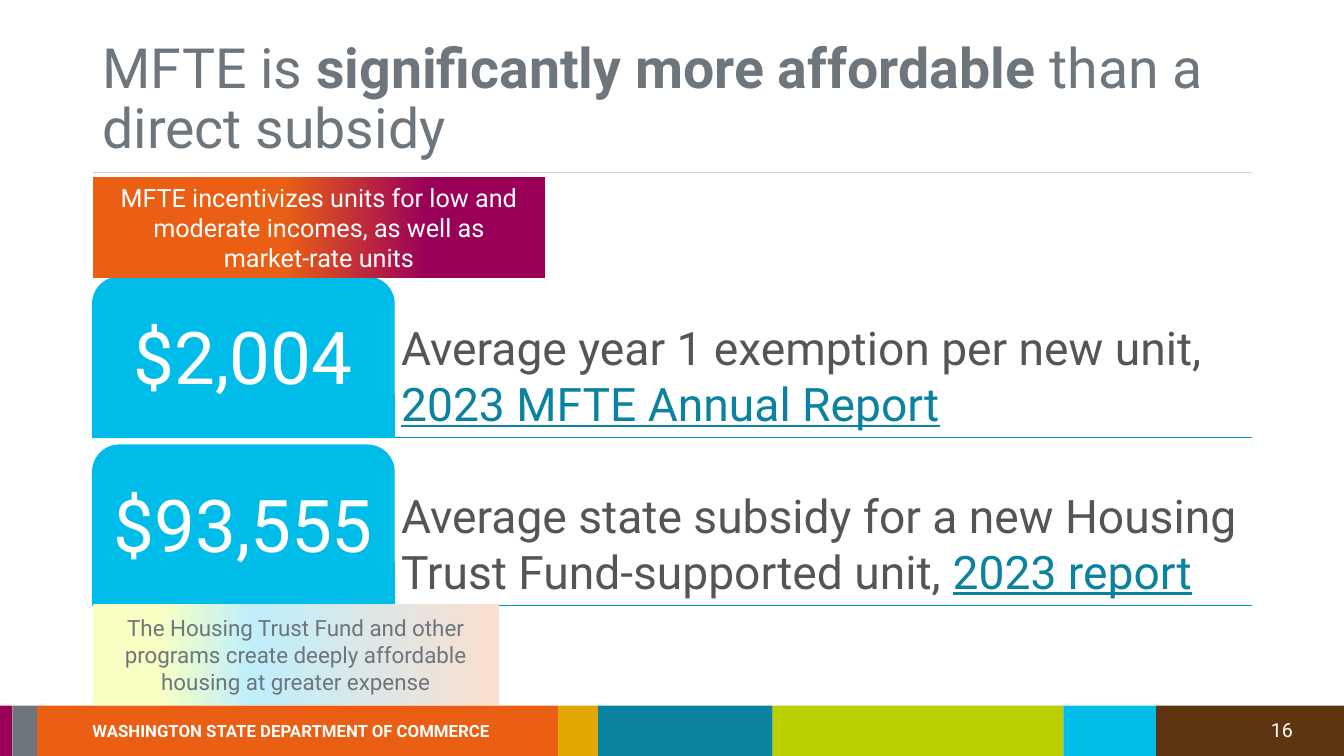
from lxml.etree import SubElement
from pptx import Presentation
from pptx.dml.color import RGBColor
from pptx.enum.shapes import MSO_CONNECTOR, MSO_SHAPE
from pptx.enum.text import MSO_ANCHOR, MSO_AUTO_SIZE, PP_ALIGN
from pptx.oxml.ns import qn
from pptx.util import Pt

WHITE = RGBColor(0xFF, 0xFF, 0xFF)
ORANGE = RGBColor(0xEA, 0x5F, 0x14)
GOLD = RGBColor(0xE2, 0xA7, 0x00)
TEAL = RGBColor(0x0A, 0x82, 0xA0)
PLUM = RGBColor(0x9B, 0x00, 0x59)
LIME = RGBColor(0xBB, 0xCE, 0x00)
BROWN = RGBColor(0x5E, 0x34, 0x11)
CYAN = RGBColor(0x00, 0xBC, 0xE8)
GRAY = RGBColor(0x6E, 0x76, 0x7D)
TEXT_GRAY = RGBColor(0x55, 0x55, 0x55)
RULE_GRAY = RGBColor(0xCF, 0xCF, 0xCF)
RULE_BLUE = RGBColor(0x00, 0x97, 0xBA)
PALE_YELLOW = RGBColor(0xF9, 0xFF, 0xC2)
PALE_BLUE = RGBColor(0xBF, 0xEF, 0xFB)
PALE_ORANGE = RGBColor(0xFB, 0xDF, 0xD0)

LEFT, WIDTH = 66.2, 828


class SlideBuilder:
    font = "Roboto"

    def __init__(self, slide):
        self.slide = slide

    def block(self, x, y, w, h, fill=None, kind=MSO_SHAPE.RECTANGLE, stops=()):
        """Add a filled shape; stops are (percent, colour) pairs."""
        shape = self.slide.shapes.add_shape(kind, Pt(x), Pt(y), Pt(w), Pt(h))
        shape.shadow.inherit = False
        shape.line.fill.background()
        if stops:
            shape.fill.gradient()
            shape.fill.gradient_angle = 0
            stop_list = next(shape.element.iter(qn("a:gsLst")))
            for old_stop in list(stop_list):
                stop_list.remove(old_stop)
            for percent, color in stops:
                stop = SubElement(stop_list, qn("a:gs"), pos=str(percent * 1000))
                SubElement(stop, qn("a:srgbClr"), val=str(color))
        else:
            shape.fill.solid()
            shape.fill.fore_color.rgb = fill
        return shape

    def rule(self, y, color):
        line = self.slide.shapes.add_connector(
            MSO_CONNECTOR.STRAIGHT, Pt(LEFT), Pt(y), Pt(LEFT + WIDTH), Pt(y))
        line.line.color.rgb = color
        line.line.width = Pt(1)
        SubElement(line.element.spPr, qn("a:effectLst"))

    def fill_text(self, shape, paragraphs, size, color, align=PP_ALIGN.CENTER,
                  anchor=MSO_ANCHOR.MIDDLE, spacing=None, inset=None, wrap=True):
        """Fill a shape; each run is (text, style), style a dict of overrides."""
        frame = shape.text_frame
        frame.word_wrap = wrap
        frame.auto_size = MSO_AUTO_SIZE.NONE if wrap else MSO_AUTO_SIZE.SHAPE_TO_FIT_TEXT
        frame.vertical_anchor = anchor
        if inset is not None:
            frame.margin_left = frame.margin_right = Pt(inset)
            frame.margin_top = frame.margin_bottom = Pt(inset)
        for index, runs in enumerate(paragraphs):
            paragraph = frame.add_paragraph() if index else frame.paragraphs[0]
            paragraph.alignment = align
            if spacing:
                paragraph.line_spacing = spacing
            for text, style in runs:
                run = paragraph.add_run()
                run.text = text
                run.font.name = self.font
                run.font.size = Pt(size)
                run.font.color.rgb = style.get("color", color)
                run.font.bold = style.get("bold", False)
                run.font.underline = style.get("underline", False)

    def text(self, x, y, w, h, paragraphs, size, color, **layout):
        box = self.slide.shapes.add_textbox(Pt(x), Pt(y), Pt(w), Pt(h))
        self.fill_text(box, paragraphs, size, color, **layout)


def main():
    deck = Presentation()
    deck.slide_width, deck.slide_height = Pt(960), Pt(540)
    page = SlideBuilder(deck.slides.add_slide(deck.slide_layouts[6]))

    # Footer band
    footer_edges = [0, 8.8, 26.5, 398.7, 427.3, 552, 759.6, 825.8, 960]
    footer_colors = [PLUM, GRAY, ORANGE, GOLD, TEAL, LIME, CYAN, BROWN]
    for start, end, color in zip(footer_edges, footer_edges[1:], footer_colors):
        page.block(start, 500.4, end - start, 39.6, color)
    page.block(0, 497.5, 960, 6.5, WHITE)
    page.text(59, 511.2, 304.6, 21.6,
              [[("WASHINGTON STATE DEPARTMENT OF COMMERCE", {"bold": True})]],
              12, WHITE, align=PP_ALIGN.LEFT, anchor=MSO_ANCHOR.TOP, wrap=False)
    page.text(900.7, 509, 31.7, 24.5, [[("16", {})]], 14, WHITE,
              align=PP_ALIGN.LEFT, anchor=MSO_ANCHOR.TOP, wrap=False)

    # Title
    page.rule(123.1, RULE_GRAY)
    page.text(LEFT, 22.3, WIDTH, 95.8,
              [[("MFTE is ", {}),
                ("significantly more affordable ", {"bold": True}),
                ("than a direct subsidy", {})]],
              39.6, GRAY, align=PP_ALIGN.LEFT, anchor=MSO_ANCHOR.BOTTOM, spacing=0.9)

    # Cost rows
    costs = [
        ("$2,004", "Average year 1 exemption per new unit, ", "2023 MFTE Annual Report"),
        ("$93,555", "Average state subsidy for a new Housing Trust Fund-supported unit, ",
         "2023 report"),
    ]
    row_top, row_pitch, row_height, amount_width = 198, 120, 114.4, 215.3
    for index, (amount, description, report) in enumerate(costs):
        top = row_top + index * row_pitch
        page.rule(top + row_height, RULE_BLUE)
        page.text(LEFT + amount_width, top, WIDTH - amount_width, row_height,
                  [[(description, {}), (report, {"color": TEAL, "underline": True})]],
                  33, TEXT_GRAY, align=PP_ALIGN.LEFT, anchor=MSO_ANCHOR.BOTTOM, inset=5)
        tab = page.block(LEFT, top, amount_width, row_height, CYAN,
                         MSO_SHAPE.ROUND_2_SAME_RECTANGLE)
        tab.adjustments[0] = 0.167
        tab.line.color.rgb = CYAN
        tab.line.width = Pt(1)
        page.text(LEFT + 5.4, top + 5.6, amount_width - 10.8, row_height - 5.6,
                  [[(amount, {})]], 52, WHITE, spacing=0.9, inset=7.8)

    # Callouts
    incentive = page.block(LEFT, 126.6, 323.3, 72, stops=[(42, ORANGE), (74, PLUM)])
    page.fill_text(incentive,
                   [[("MFTE incentivizes units for low and moderate incomes, as well as", {})],
                    [("market-rate units", {})]], 18, WHITE)
    expense = page.block(LEFT, 431.5, 290, 72,
                         stops=[(16, PALE_YELLOW), (39, PALE_BLUE), (100, PALE_ORANGE)])
    page.fill_text(expense,
                   [[("The Housing Trust Fund and other programs create deeply affordable "
                      "housing at greater expense", {})]], 16, GRAY)

    deck.save("out.pptx")


if __name__ == "__main__":
    main()
